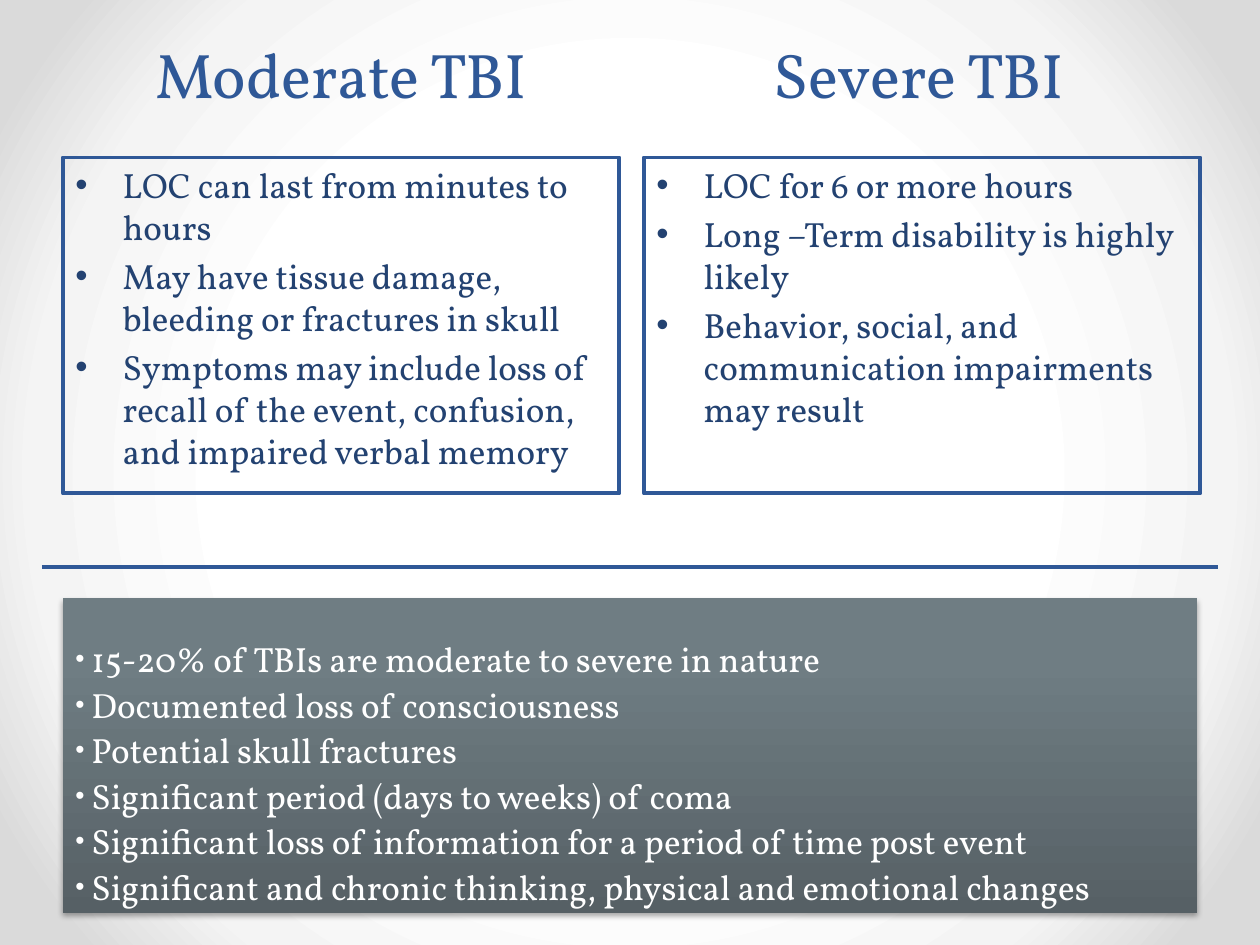
"""Build a slide that sets moderate TBI beside severe TBI."""
from lxml import etree
from pptx import Presentation
from pptx.dml.color import RGBColor
from pptx.enum.shapes import MSO_CONNECTOR, MSO_SHAPE
from pptx.enum.text import MSO_ANCHOR, PP_ALIGN
from pptx.oxml import parse_xml
from pptx.oxml.ns import nsdecls, qn
from pptx.util import Pt

RECT, LINE = MSO_SHAPE.RECTANGLE, MSO_CONNECTOR.STRAIGHT
TOP, MID, LOW = MSO_ANCHOR.TOP, MSO_ANCHOR.MIDDLE, MSO_ANCHOR.BOTTOM
LEFT, MEAN = PP_ALIGN.LEFT, PP_ALIGN.CENTER
FONT = "Vollkorn"
HUES = {"blue": "2F5897", "navy": "234271", "white": "FFFFFF", "black": "000000"}
GLOW = [(50, "FFFFFF"), (76, "F4F4F4"), (92, "DADADA")]
SLATE = [(0, "566065"), (80, "6F7D83"), (100, "6F7E84")]
ROUND = ('<a:path path="circle"><a:fillToRect l="50000" t="50000" '
         'r="50000" b="50000"/></a:path>')
UP = '<a:lin ang="16200000" scaled="0"/>'

MILD = [
    "LOC can last from minutes to hours",
    "May have tissue damage, bleeding or fractures in skull",
    "Symptoms may include loss of recall of the event, confusion, "
    "and impaired verbal memory",
]
GRAVE = [
    "LOC for 6 or more hours",
    "Long –Term disability is highly likely",
    "Behavior, social, and communication impairments may result",
]
FACTS = [
    " 15-20% of TBIs are moderate to severe in nature",
    " Documented loss of consciousness",
    " Potential skull fractures",
    " Significant period (days to weeks) of coma",
    " Significant loss of information for a period of time post event",
    " Significant and chronic thinking, physical and emotional changes",
]


def grad(stops, way):
    """Return a gradient fill element."""
    marks = "".join(f'<a:gs pos="{pos * 1000}"><a:srgbClr val="{hue}"/></a:gs>'
                    for pos, hue in stops)
    return parse_xml(f'<a:gradFill {nsdecls("a")} rotWithShape="1">'
                     f'<a:gsLst>{marks}</a:gsLst>{way}</a:gradFill>')


class Deck:
    """Hold the style and the current slide."""

    def __init__(self):
        """Start a deck with one title-only slide."""
        self.prs = Presentation()
        self.prs.slide_width, self.prs.slide_height = Pt(720), Pt(540)
        self.slide = self.prs.slides.add_slide(self.prs.slide_layouts[5])
        self.shapes = self.slide.shapes

    def color(self, name):
        """Look up a colour by name."""
        return RGBColor.from_string(HUES[name])

    def back(self, stops):
        """Paint the round glow behind the slide."""
        bg = parse_xml(f'<p:bg {nsdecls("p", "a")}><p:bgPr><a:effectLst/></p:bgPr></p:bg>')
        bg[0].insert(0, grad(stops, ROUND))
        self.slide.element.cSld.insert(0, bg)

    def text(self, shape, lines, size, hue, align=LEFT, anchor=TOP, gap=0):
        """Fill a shape with paragraphs and return them."""
        frame = shape.text_frame
        frame.word_wrap, frame.vertical_anchor = True, anchor
        for num, line in enumerate(lines):
            para = frame.add_paragraph() if num else frame.paragraphs[0]
            para.alignment, para.space_before = align, Pt(gap)
            run = para.add_run()
            run.text = line
            run.font.name, run.font.size = FONT, Pt(size)
            run.font.color.rgb = self.color(hue)
        return frame.paragraphs

    def bullet(self, para, indent=0, scale=100):
        """Put a dot before a paragraph."""
        props = para._p.get_or_add_pPr()
        props.set("marL", str(Pt(indent)))
        props.set("indent", str(-Pt(indent)))
        etree.SubElement(props, qn("a:buSzPct")).set("val", str(scale * 1000))
        etree.SubElement(props, qn("a:buFont")).set("typeface", "Arial")
        etree.SubElement(props, qn("a:buChar")).set("char", "•")

    def head(self, shape, text, left):
        """Place a heading over its column."""
        shape.left, shape.top = Pt(left), Pt(18)
        shape.width, shape.height = Pt(318), Pt(48)
        self.text(shape, [text], 36, "blue", MEAN, MID)

    def box(self, left, top, wide, high):
        """Add a plain rectangle."""
        shape = self.shapes.add_shape(RECT, Pt(left), Pt(top), Pt(wide), Pt(high))
        shape.shadow.inherit = False
        return shape

    def card(self, lines, left):
        """Add an outlined list."""
        shape = self.box(left, 90, 318, 192)
        shape.fill.background()
        shape.line.color.rgb, shape.line.width = self.color("blue"), Pt(2.25)
        for para in self.text(shape, lines, 20, "navy", gap=4):
            self.bullet(para, 27)

    def panel(self, lines):
        """Add the shaded list at the foot."""
        shape = self.box(36, 342, 648, 180)
        shape.line.fill.background()
        props = shape._element.spPr
        props.insert(2, grad(SLATE, UP))
        props.find(qn("a:effectLst")).append(parse_xml(
            f'<a:outerShdw {nsdecls("a")} blurRad="{Pt(3.1)}" dist="{Pt(1.8)}" '
            f'dir="5400000" rotWithShape="0"><a:srgbClr val="{HUES["black"]}">'
            '<a:alpha val="35000"/></a:srgbClr></a:outerShdw>'))
        for para in self.text(shape, lines, 20, "white", anchor=LOW, gap=10):
            para.line_spacing = Pt(16)
            self.bullet(para, scale=75)

    def rule(self, left, right, top):
        """Draw a level line."""
        line = self.shapes.add_connector(LINE, Pt(left), Pt(top), Pt(right), Pt(top))
        line.line.color.rgb, line.line.width = self.color("blue"), Pt(2.25)
        etree.SubElement(line._element.spPr, qn("a:effectLst"))


def main():
    """Build and save the slide."""
    deck = Deck()
    deck.back(GLOW)
    deck.head(deck.shapes.title, "Moderate TBI", 36)
    deck.head(deck.shapes.add_textbox(0, 0, 0, 0), "Severe TBI", 366)
    deck.card(MILD, 36)
    deck.card(GRAVE, 368)
    deck.panel(FACTS)
    deck.rule(24, 696, 324)
    deck.prs.save("out.pptx")


if __name__ == "__main__":
    main()
